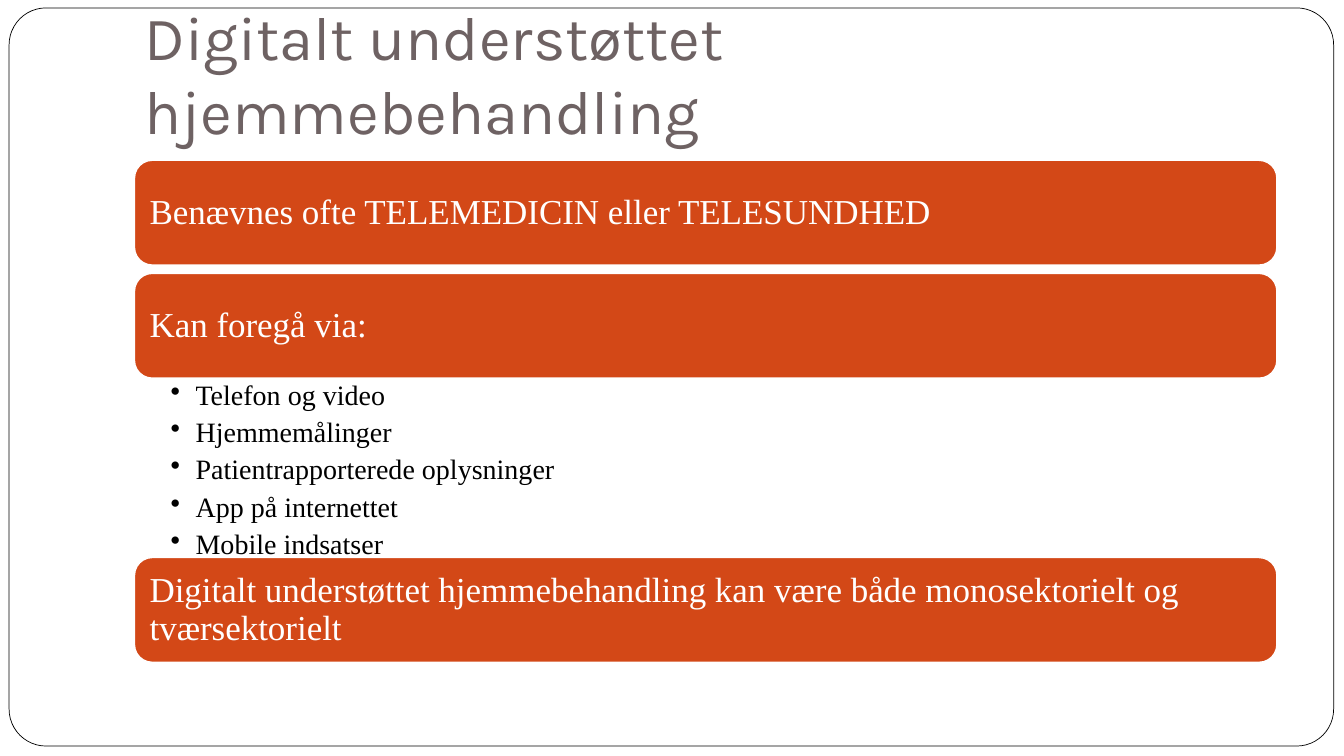
from pptx import Presentation
from pptx.dml.color import RGBColor
from pptx.enum.shapes import MSO_SHAPE
from pptx.enum.text import MSO_ANCHOR, PP_ALIGN
from pptx.oxml.ns import qn
from pptx.util import Cm, Pt
from lxml.etree import SubElement

LEFT, WIDE = 3.39, 28.79
BAND, GAP, LIST = 2.64, 0.21, 4.52


def color(code):
    return RGBColor.from_string(code)


class Deck:
    fill, white, black, grey = "D34817", "FFFFFF", "000000", "6E6263"
    head, body = "Karla", "Times New Roman"

    def __init__(self):
        self.file = Presentation()
        self.file.slide_width, self.file.slide_height = Cm(33.87), Cm(19.05)
        self.slide = self.file.slides.add_slide(self.file.slide_layouts[6])

    def panel(self, box, fill, line, width, round_by):
        """Add a rounded rectangle."""
        shape = self.slide.shapes.add_shape(
            MSO_SHAPE.ROUNDED_RECTANGLE, *map(Cm, box))
        shape.adjustments[0] = round_by
        shape.shadow.inherit = False
        shape.fill.solid()
        shape.fill.fore_color.rgb = color(fill)
        shape.line.color.rgb = color(line)
        shape.line.width = Pt(width)
        return shape

    def label(self, shape, text, size, font, ink, pads, anchor):
        """Fill a shape with left-aligned text, one paragraph per line."""
        frame = shape.text_frame
        frame.text = text
        frame.word_wrap = True
        frame.vertical_anchor = anchor
        (frame.margin_left, frame.margin_top,
         frame.margin_right, frame.margin_bottom) = map(Cm, pads)
        for par in frame.paragraphs:
            par.alignment = PP_ALIGN.LEFT
            for run in par.runs:
                run.font.size, run.font.name = Pt(size), font
                run.font.color.rgb = color(ink)
        return frame.paragraphs

    def title(self, box, text):
        shape = self.slide.shapes.add_textbox(*map(Cm, box))
        self.label(shape, text, 44, self.head, self.grey,
                   (0.25, 0.13, 0.25, 0.25), MSO_ANCHOR.BOTTOM)

    def band(self, top, text):
        box = (LEFT, top, WIDE, BAND)
        shape = self.panel(box, self.fill, self.white, 1, 0.17)
        for par in self.label(shape, text, 25, self.body, self.white,
                              (0.25,) * 4, MSO_ANCHOR.MIDDLE):
            par.line_spacing = 0.9

    def bullets(self, top, items):
        shape = self.slide.shapes.add_textbox(
            *map(Cm, (LEFT, top, WIDE, LIST)))
        for par in self.label(shape, "\n".join(items), 20, self.body,
                              self.black, (0.91, 0.08, 0.48, 0.08),
                              MSO_ANCHOR.TOP):
            par.line_spacing, par.space_after = 0.9, Pt(5)
            props = par._p.get_or_add_pPr()
            props.set("marL", str(Cm(0.63)))
            props.set("indent", str(-Cm(0.63)))
            SubElement(props, qn("a:buChar")).set("char", "•")


def main():
    deck = Deck()
    deck.panel((0.23, 0.2, 33.38, 18.6), deck.white, deck.black, 0.5, 0.05)
    deck.title((LEFT, 0.76, WIDE, 3.18), "Digitalt understøttet hjemmebehandling")
    top = 4.04
    deck.band(top, "Benævnes ofte TELEMEDICIN eller TELESUNDHED")
    top += BAND + GAP
    deck.band(top, "Kan foregå via:")
    top += BAND
    deck.bullets(top, ["Telefon og video", "Hjemmemålinger",
                       "Patientrapporterede oplysninger",
                       "App på internettet", "Mobile indsatser"])
    top += LIST
    deck.band(top, "Digitalt understøttet hjemmebehandling kan være både "
                   "monosektorielt og tværsektorielt")
    deck.file.save("out.pptx")


if __name__ == "__main__":
    main()
